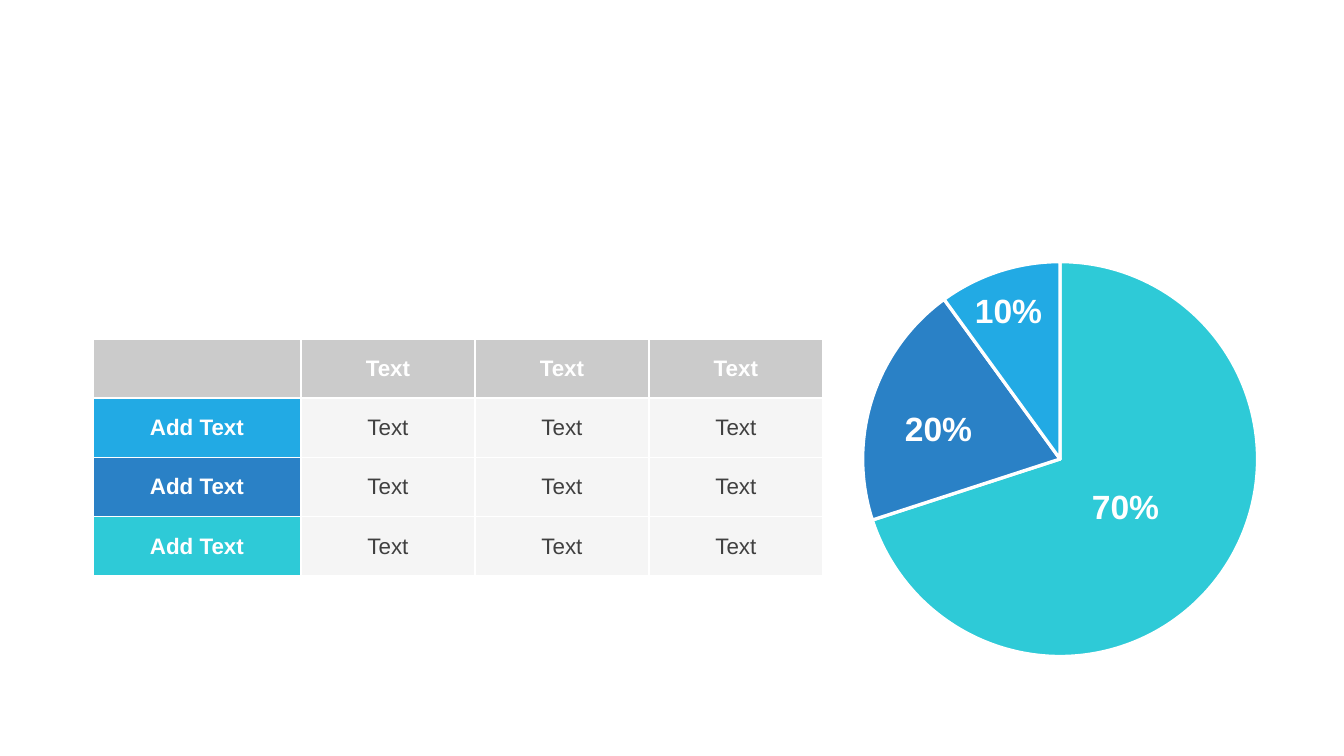
from lxml import etree
from pptx import Presentation
from pptx.chart.data import CategoryChartData
from pptx.dml.color import RGBColor
from pptx.enum.chart import XL_CHART_TYPE
from pptx.enum.text import MSO_ANCHOR, PP_ALIGN
from pptx.oxml import parse_xml
from pptx.oxml.ns import nsdecls
from pptx.util import Pt

PIE = XL_CHART_TYPE.PIE
CENTER = PP_ALIGN.CENTER
MIDDLE = MSO_ANCHOR.MIDDLE

PX = 914400 / 134.4
FONT = "Arial"
WHITE = RGBColor(0xFF, 0xFF, 0xFF)
BLACK = RGBColor(0x00, 0x00, 0x00)
SKY = RGBColor(0x22, 0xAA, 0xE4)
BLUE = RGBColor(0x2A, 0x81, 0xC6)
TEAL = RGBColor(0x2E, 0xCA, 0xD7)
HEADER_GRAY = RGBColor(0xCB, 0xCB, 0xCB)
CELL_GRAY = RGBColor(0xF5, 0xF5, 0xF5)
TEXT_GRAY = RGBColor(0x40, 0x40, 0x40)


def px(*lengths):
    return [round(length * PX) for length in lengths]


def write(frame, text, size, color, bold):
    frame.text = text
    frame.vertical_anchor = MIDDLE
    paragraph = frame.paragraphs[0]
    paragraph.alignment = CENTER
    font = paragraph.runs[0].font if text else paragraph.font
    font.name = FONT
    font.size = Pt(size)
    font.bold = bold
    font.color.rgb = color


prs = Presentation()
prs.slide_width, prs.slide_height = px(1344, 756)
slide = prs.slides.add_slide(prs.slide_layouts[6])

# Pie chart
shares = CategoryChartData()
shares.categories = ["1", "2", "3"]
shares.add_series("Series 1", (70, 20, 10))
pie = slide.shapes.add_chart(PIE, *px(841, 240, 434, 434), shares).chart
pie.has_legend = False
pie.has_title = False
pie.font.name = FONT
pie.font.size = Pt(18)
pie.font.color.rgb = BLACK
plot = pie.plots[0]
plot.vary_by_categories = False
for index, color in enumerate((TEAL, BLUE, SKY)):
    sector = plot.series[0].points[index].format
    sector.fill.solid()
    sector.fill.fore_color.rgb = color
    sector.line.color.rgb = WHITE
    sector.line.width = Pt(1.75)

# Fixed plot area, centred in the chart frame
plot_area = pie._chartSpace.chart.plotArea
for layout in plot_area.findall("{*}layout"):
    plot_area.remove(layout)
plot_area.insert(0, parse_xml(
    f'<c:layout {nsdecls("c")}><c:manualLayout><c:layoutTarget val="inner"/>'
    '<c:xMode val="edge"/><c:yMode val="edge"/><c:x val="0.05"/><c:y val="0.05"/>'
    '<c:w val="0.91"/><c:h val="0.91"/></c:manualLayout></c:layout>'))

# Percentages on the sectors
for share, left, top in (("70%", 1074, 479), ("20%", 887, 401), ("10%", 957, 283)):
    label = slide.shapes.add_textbox(*px(left, top, 103, 54)).text_frame
    label.word_wrap = True
    write(label, share, 18, WHITE, True)

# Table
rows = [["", "Text", "Text", "Text"]] + [["Add Text", "Text", "Text", "Text"]] * 3
row_colors = (HEADER_GRAY, SKY, BLUE, TEAL)
table = slide.shapes.add_table(4, 4, *px(93, 339, 730, 237)).table
for column, width in zip(table.columns, px(208, 174, 174, 174)):
    column.width = width
for r, texts in enumerate(rows):
    table.rows[r].height = px(237 / len(rows))[0]
    for c, text in enumerate(texts):
        heading = r == 0 or c == 0
        cell = table.cell(r, c)
        cell.fill.solid()
        cell.fill.fore_color.rgb = row_colors[r] if heading else CELL_GRAY
        write(cell.text_frame, text, 12, WHITE if heading else TEXT_GRAY, heading)
        cell.vertical_anchor = MIDDLE
        # White cell borders
        properties = cell._tc.get_or_add_tcPr()
        for position, side in enumerate(("lnL", "lnR", "lnT", "lnB")):
            border = etree.fromstring(
                f'<a:{side} {nsdecls("a")} w="{Pt(1)}"><a:solidFill>'
                f'<a:srgbClr val="{WHITE}"/></a:solidFill></a:{side}>')
            properties.insert(position, border)

prs.save("out.pptx")
